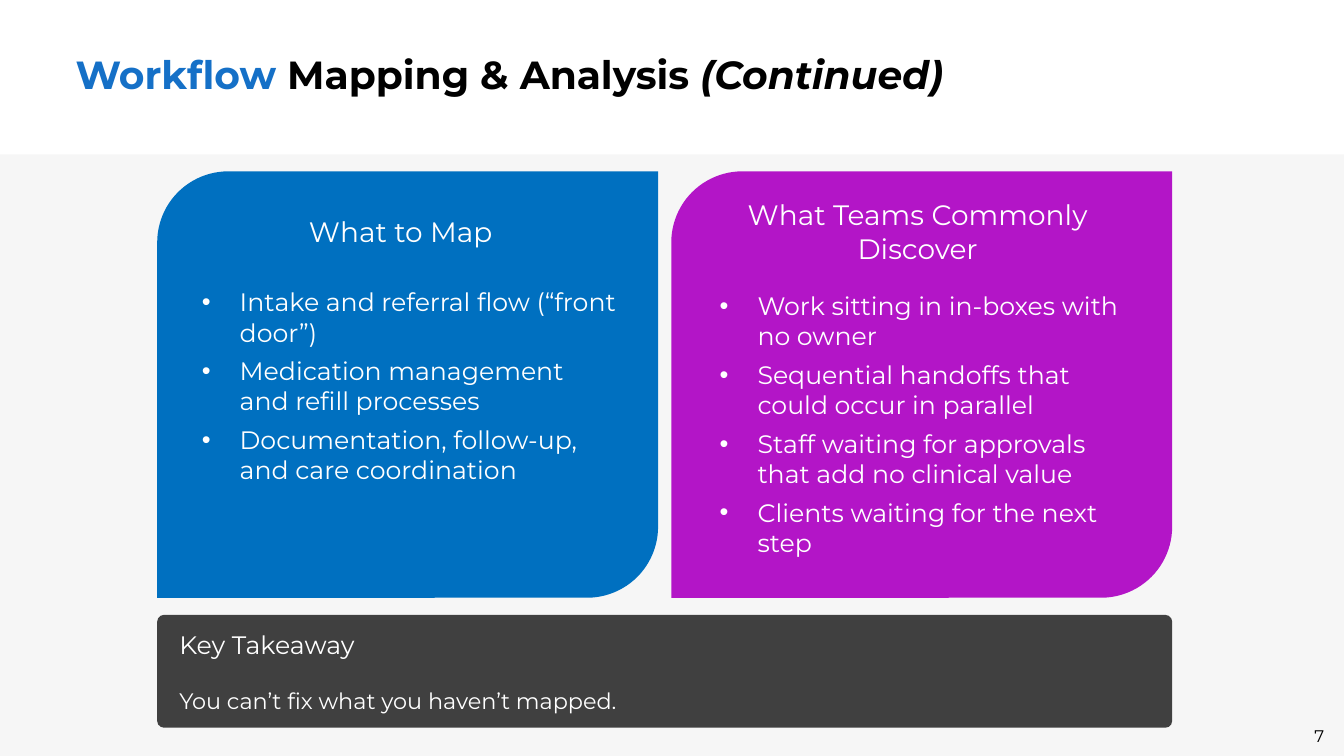
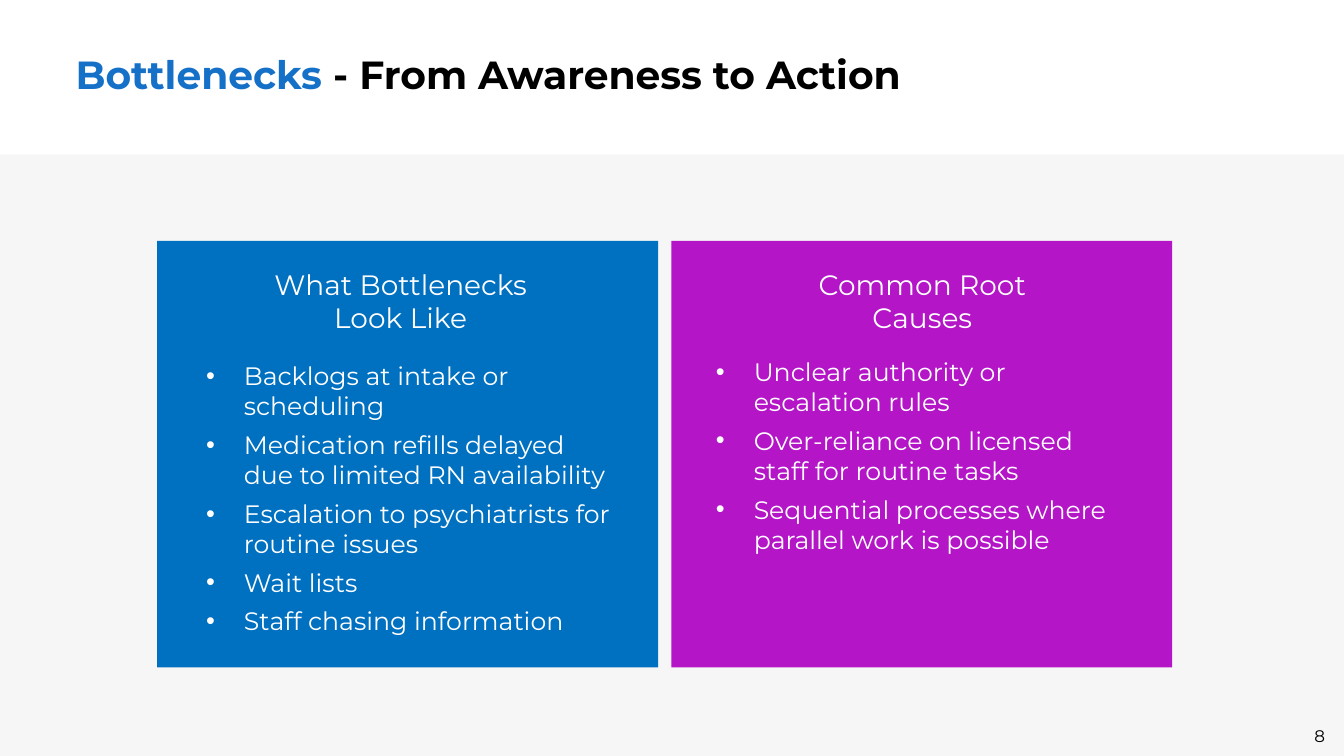
"""Build two slides on workflow mapping and bottlenecks."""
from dataclasses import dataclass

from pptx import Presentation
from pptx.dml.color import RGBColor
from pptx.enum.shapes import MSO_SHAPE
from pptx.enum.text import MSO_ANCHOR, MSO_AUTO_SIZE, PP_ALIGN
from pptx.oxml.ns import qn
from pptx.util import Pt

RECT = MSO_SHAPE.RECTANGLE
LEAF = MSO_SHAPE.ROUND_2_DIAG_RECTANGLE
ROUND = MSO_SHAPE.ROUNDED_RECTANGLE
MIDDLE, TOP = MSO_ANCHOR.MIDDLE, MSO_ANCHOR.TOP
LEFT, CENTER = PP_ALIGN.LEFT, PP_ALIGN.CENTER
FIXED = MSO_AUTO_SIZE.NONE


@dataclass(frozen=True)
class Theme:
    """Colours, font and type sizes."""
    font: str = "Montserrat"
    black: str = "000000"
    white: str = "FFFFFF"
    accent: str = "1570C7"
    band: str = "F6F6F6"
    dark: str = "404040"
    panels: tuple = ("0070C0", "B315C7")
    title: int = 28
    head: int = 20
    body: int = 18
    note: int = 16
    page: int = 12


THEME = Theme()
FIRST = 7
SLIDES = [
    {
        "title": ("Workflow ", "Mapping & Analysis ", "(Continued)"),
        "shape": LEAF,
        "top": 122.4,
        "panels": [
            {"head": "What to Map", "shift": 50.4, "width": 247, "inset": 8.1,
             "items": ["Intake and referral flow (“front door”)",
                       "Medication management and refill processes",
                       "Documentation, follow-up, and care coordination"]},
            {"head": "What Teams Commonly Discover", "shift": 29.5,
             "width": 293, "inset": 10.8,
             "items": ["Work sitting in in-boxes with no owner",
                       "Sequential handoffs that could occur in parallel",
                       "Staff waiting for approvals that add no clinical value",
                       "Clients waiting for the next step"]},
        ],
        "note": ("Key Takeaway", "You can’t fix what you haven’t mapped."),
    },
    {
        "title": ("Bottlenecks ", "- From Awareness to Action"),
        "shape": RECT,
        "top": 172.1,
        "panels": [
            {"head": "What Bottlenecks Look Like", "shift": 50.4,
             "width": 247, "inset": 11.1,
             "items": ["Backlogs at intake or scheduling",
                       "Medication refills delayed due to limited RN availability",
                       "Escalation to psychiatrists for routine issues",
                       "Wait lists",
                       "Staff chasing information"]},
            {"head": "Common Root Causes", "shift": 68.4, "width": 221.8,
             "inset": 8.1,
             "items": ["Unclear authority or escalation rules",
                       "Over-reliance on licensed staff for routine tasks",
                       "Sequential processes where parallel work is possible"]},
        ],
    },
]

WIDE, HIGH = 960, 540
BAND = 110.2
EDGE, STEP = 112.3, 367.2
PANEL_W, PANEL_H = 357.8, 304.6
HEAD_Y, HEAD_H = 15.1, 55.4
LIST_X, LIST_Y, LIST_W = 16.6, 70.6, 326.9


def place(item, x, y, w, h):
    """Set a shape's position and size in points."""
    item.left, item.top, item.width, item.height = map(Pt, (x, y, w, h))


def style(run, size, color, bold=False, italic=False):
    """Format one run."""
    font = run.font
    font.name, font.size = THEME.font, Pt(size)
    font.bold, font.italic = bold, italic
    font.color.rgb = RGBColor.from_string(color)


def write(frame, lines, sizes, color, gap=0, align=LEFT, anchor=TOP):
    """Fill a text frame with one paragraph per line."""
    frame.text = "\n".join(lines)
    frame.word_wrap, frame.auto_size = True, FIXED
    frame.vertical_anchor = anchor
    for rank, (para, size) in enumerate(zip(frame.paragraphs, sizes)):
        para.alignment = align
        para.space_before = Pt(gap if rank else 0)
        for run in para.runs:
            style(run, size, color)


def block(slide, kind, x, y, w, h, color):
    """Add a plain filled shape."""
    shape = slide.shapes.add_shape(kind, *map(Pt, (x, y, w, h)))
    shape.shadow.inherit = False
    shape.fill.solid()
    shape.fill.fore_color.rgb = RGBColor.from_string(color)
    shape.line.fill.background()
    return shape


def label(slide, x, y, w, h):
    """Add an empty text box."""
    return slide.shapes.add_textbox(*map(Pt, (x, y, w, h)))


def add_title(slide, parts):
    """Write the title with an accented first part."""
    frame = slide.shapes.title.text_frame
    frame.auto_size, frame.vertical_anchor = FIXED, MIDDLE
    para = frame.paragraphs[0]
    para.alignment, para.line_spacing = LEFT, 0.9
    for rank, text in enumerate(parts):
        run = para.add_run()
        run.text = text
        style(run, THEME.title, THEME.black if rank else THEME.accent,
              bold=True, italic=rank == 2)


def add_page(slide, number):
    """Add the slide number field."""
    box = label(slide, 931.7, 514.8, 20.9, 21.6)
    write(box.text_frame, [str(number)], [THEME.page], THEME.black)
    box.text_frame.word_wrap = False
    field = box.element.find(".//" + qn("a:r"))
    field.tag = qn("a:fld")
    field.set("id", "{B6F15528-21DE-4FAA-801E-634DDDAF4B2B}")
    field.set("type", "slidenum")


def add_panel(slide, rank, kind, top, panel):
    """Add a coloured panel with its heading and list."""
    x = EDGE + rank * STEP
    block(slide, kind, x, top, PANEL_W, PANEL_H, THEME.panels[rank])
    head = label(slide, x + panel["shift"], top + HEAD_Y,
                 panel["width"], HEAD_H)
    write(head.text_frame, [panel["head"]], [THEME.head], THEME.white,
          align=CENTER, anchor=MIDDLE)
    body, inset = slide.placeholders[rank + 1], panel["inset"]
    slide.shapes.element.append(body.element)
    place(body, x + LIST_X + inset, top + LIST_Y + inset,
          LIST_W - 2 * inset, PANEL_H - LIST_Y - inset)
    items = panel["items"]
    write(body.text_frame, items, [THEME.body] * len(items), THEME.white,
          gap=6)


def add_note(slide, lines):
    """Add the takeaway bar."""
    bar = block(slide, ROUND, EDGE, 439.2, STEP + PANEL_W, 80.6, THEME.dark)
    bar.adjustments[0] = 0.06
    write(bar.text_frame, lines, [THEME.body, THEME.note], THEME.white,
          gap=19.5, anchor=MIDDLE)
    bar.text_frame.margin_left = Pt(14.4)


def main():
    """Build and save the deck."""
    deck = Presentation()
    deck.slide_width, deck.slide_height = Pt(WIDE), Pt(HIGH)
    deck.element.set("firstSlideNum", str(FIRST))
    layout = deck.slide_layouts[3]
    place(layout.placeholders[0], 46.8, 1.4, 733, 106.6)
    for rank, data in enumerate(SLIDES):
        slide = deck.slides.add_slide(layout)
        if rank == 0:
            band = block(slide, RECT, 0, BAND, WIDE, HIGH - BAND, THEME.band)
            layout.shapes.element.insert(2, band.element)
        add_title(slide, data["title"])
        for side, panel in enumerate(data["panels"]):
            add_panel(slide, side, data["shape"], data["top"], panel)
        if "note" in data:
            add_note(slide, data["note"])
        add_page(slide, FIRST + rank)
    deck.save("out.pptx")


if __name__ == "__main__":
    main()
